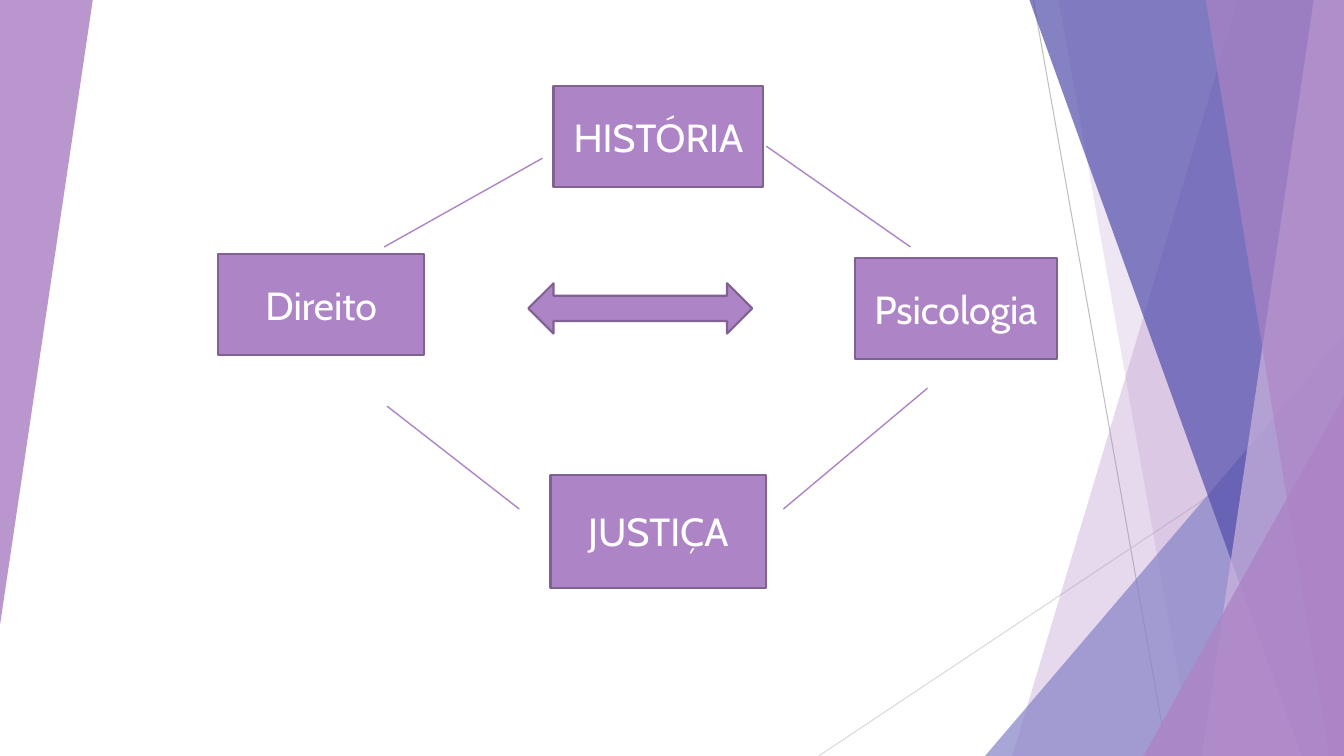
from collections import namedtuple

from lxml.etree import SubElement
from pptx import Presentation
from pptx.dml.color import RGBColor
from pptx.enum.shapes import MSO_CONNECTOR, MSO_SHAPE
from pptx.enum.text import MSO_ANCHOR, PP_ALIGN
from pptx.oxml.ns import qn
from pptx.util import Inches, Pt

Box = namedtuple("Box", "left top width height")

FONT = "Cabin"
COLORS = {
    "lilac": "AD84C6",
    "pale_lilac": "CEB5DD",
    "periwinkle": "8784C7",
    "indigo": "524EAB",
    "outline": "806292",
    "gray": "BFBFBF",
    "light_gray": "D9D9D9",
    "white": "FFFFFF",
}


def color(name):
    return RGBColor.from_string(COLORS[name])


def format_shape(shape, fill, opacity=100, line=None):
    shape.shadow.inherit = False
    shape.fill.solid()
    shape.fill.fore_color.rgb = color(fill)
    if opacity < 100:
        fill_color = shape.fill._xPr.find(qn("a:solidFill"))[0]
        SubElement(fill_color, qn("a:alpha")).set("val", str(opacity * 1000))
    if line:
        shape.line.color.rgb = color(line)
        shape.line.width = Pt(1.5)
    else:
        shape.line.fill.background()


def add_preset(slide, kind, box, fill, **style):
    shape = slide.shapes.add_shape(kind, *(Inches(value) for value in box))
    format_shape(shape, fill, **style)
    return shape


def add_line(slide, start, end, line_color, width):
    points = (Inches(value) for value in (*start, *end))
    connector = slide.shapes.add_connector(MSO_CONNECTOR.STRAIGHT, *points)
    connector.line.color.rgb = color(line_color)
    connector.line.width = Pt(width)
    SubElement(connector._element.spPr, qn("a:effectLst"))


def write_text(shape, text, size=28, font_color="white", align=PP_ALIGN.CENTER):
    frame = shape.text_frame
    frame.word_wrap = True
    frame.vertical_anchor = MSO_ANCHOR.MIDDLE
    paragraph = frame.paragraphs[0]
    paragraph.alignment = align
    run = paragraph.add_run()
    run.text = text
    run.font.name = FONT
    run.font.size = Pt(size)
    run.font.color.rgb = color(font_color)


def add_band(slide, box, top_inset, bottom_inset, fill, opacity):
    """Full-height band whose slanted left edge is measured from the right."""
    right, bottom = box.left + box.width, box.top + box.height
    corners = [(right - top_inset, box.top), (right, box.top),
               (right, bottom), (right - bottom_inset, bottom)]
    points = [(Inches(x), Inches(y)) for x, y in corners]
    builder = slide.shapes.build_freeform(*points[0], scale=1.0)
    builder.add_line_segments(points[1:], close=True)
    format_shape(builder.convert_to_shape(), fill, opacity)


def add_triangle(slide, box, fill, opacity, rotation=0):
    triangle = add_preset(slide, MSO_SHAPE.ISOSCELES_TRIANGLE, box, fill, opacity=opacity)
    triangle.adjustments[0] = 1
    triangle.rotation = rotation


def add_corner(slide, box, width, height, fill, opacity):
    """Triangle standing in the bottom right corner of the box."""
    left, top = box.left + box.width - width, box.top + box.height - height
    add_triangle(slide, Box(left, top, width, height), fill, opacity)


def draw_backdrop(slide, box):
    right, bottom = box.left + box.width, box.top + box.height

    # Thin lines
    add_line(slide, (right - 3.08, box.top), (right - 1.75, bottom), "gray", 0.75)
    add_line(slide, (right, box.top + 4.03), (right - 5.21, bottom), "light_gray", 0.75)

    # Translucent facets on the right, from back to front
    add_band(slide, box, 1.05, 3.29, "lilac", 30)
    add_band(slide, box, 2.83, 1.5, "lilac", 20)
    add_corner(slide, box, 3.56, 4.17, "periwinkle", 72)
    add_band(slide, box, 3.12, 0.42, "indigo", 70)
    add_band(slide, box, 0.3, 1.41, "pale_lilac", 70)
    add_band(slide, box, 1.37, 0.15, "lilac", 65)
    add_corner(slide, box, 1.99, 3.57, "lilac", 80)

    # Wedge on the left
    add_triangle(slide, Box(box.left, box.top, 0.92, 6.2), "lilac", 85, rotation=180)


def draw_diagram(slide, box):
    def place(left, top, width, height):
        return Box(box.left + left, box.top + top, width, height)

    def point(x, y):
        return box.left + x, box.top + y

    # Concepts
    concepts = [
        ("HISTÓRIA", place(3.33, 0, 2.08, 1.01)),
        ("JUSTIÇA", place(3.3, 3.86, 2.14, 1.12)),
        ("Direito", place(0, 1.67, 2.05, 1)),
        ("Psicologia", place(6.32, 1.71, 2, 1)),
    ]
    for text, area in concepts:
        concept = add_preset(slide, MSO_SHAPE.RECTANGLE, area, "lilac", line="outline")
        write_text(concept, text)

    # Links between neighbouring concepts
    links = [
        ((3.22, 0.72), (1.65, 1.6)),
        ((2.99, 4.2), (1.68, 3.18)),
        ((6.87, 1.6), (5.44, 0.6)),
        ((7.04, 3), (5.61, 4.2)),
    ]
    for start, end in links:
        add_line(slide, point(*start), point(*end), "lilac", 1)

    # Two-way arrow in the centre
    add_preset(slide, MSO_SHAPE.LEFT_RIGHT_ARROW, place(3.08, 1.96, 2.22, 0.5),
               "lilac", line="outline")


def main():
    presentation = Presentation()
    presentation.slide_width = Inches(13.33)
    presentation.slide_height = Inches(7.5)
    slide = presentation.slides.add_slide(presentation.slide_layouts[6])
    draw_backdrop(slide, Box(0, 0, 13.33, 7.5))
    draw_diagram(slide, Box(2.16, 0.85, 8.32, 4.98))
    presentation.save("out.pptx")


if __name__ == "__main__":
    main()
